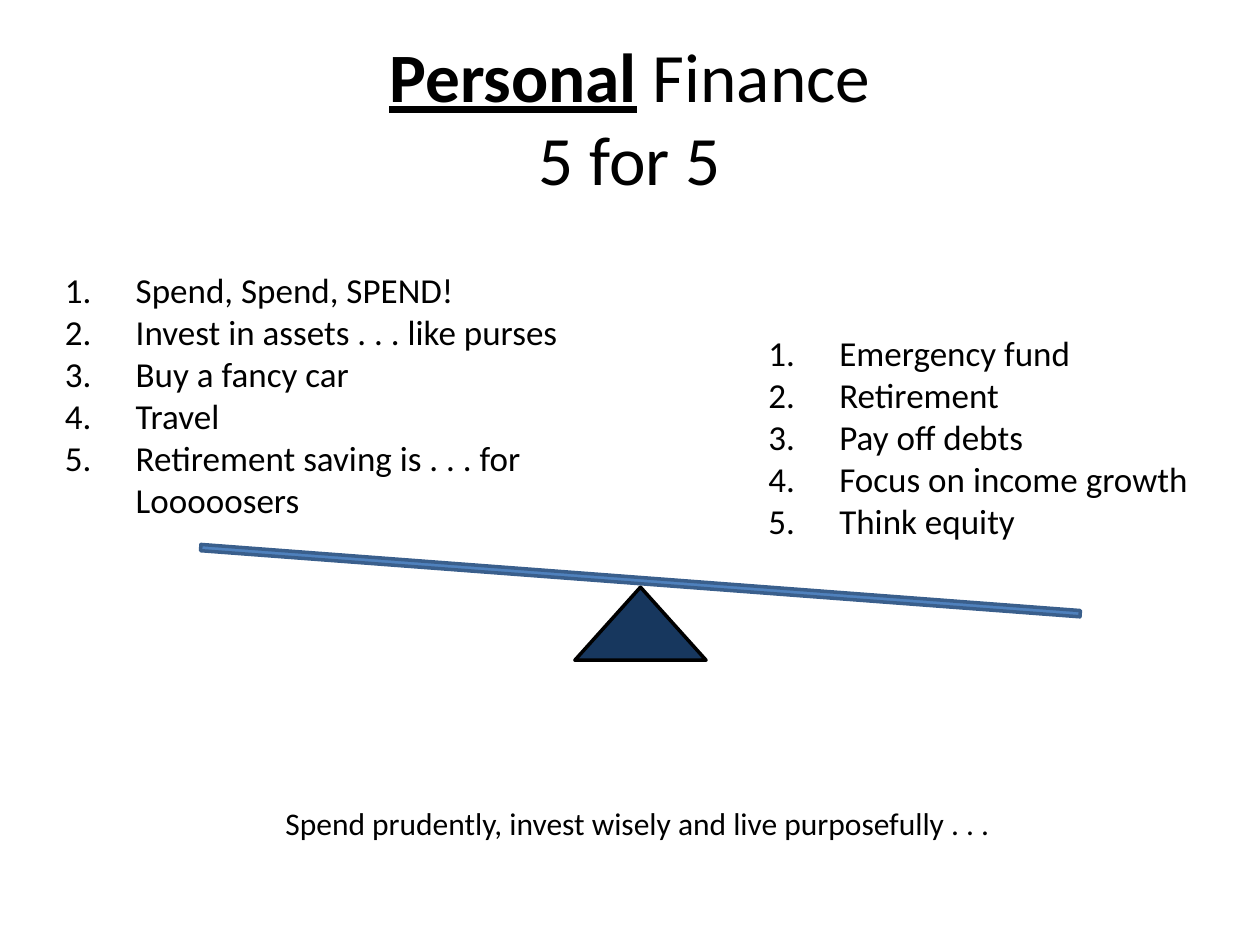
from typing import NamedTuple

import pptx
import pptx.dml.color
import pptx.enum.shapes
import pptx.enum.text
import pptx.oxml.ns
import pptx.util
from lxml import etree

Pt = pptx.util.Pt
ALIGN = pptx.enum.text.PP_ALIGN
ANCHOR = pptx.enum.text.MSO_ANCHOR
SHAPE = pptx.enum.shapes.MSO_SHAPE

FONT = "Calibri"
INDENT = 40.5
COLORS = {
    "text": "000000",
    "outline": "000000",
    "fulcrum": "17375E",
    "beam": "4F81BD",
    "beam_edge": "3A5F8C",
}


class Box(NamedTuple):
    left: float
    top: float
    width: float
    height: float

    def lengths(self) -> list:
        return [Pt(v) for v in self]


class NumberedList(NamedTuple):
    box: Box
    items: list[str]
    align: ALIGN


class Part(NamedTuple):
    kind: SHAPE
    box: Box
    fill: str
    line: str
    rotation: float = 0


LISTS = [
    NumberedList(Box(30, 150, 318, 168), [
        "Spend, Spend, SPEND!",
        "Invest in assets . . . like purses",
        "Buy a fancy car",
        "Travel",
        "Retirement saving is . . . for Looooosers",
    ], ALIGN.LEFT),
    NumberedList(Box(432, 186, 264, 156), [
        "Emergency fund",
        "Retirement",
        "Pay off debts",
        "Focus on income growth",
        "Think equity",
    ], ALIGN.JUSTIFY),
]

SEESAW = [
    Part(SHAPE.ISOSCELES_TRIANGLE, Box(328.5, 335.5, 75, 41.75), "fulcrum", "outline"),
    Part(SHAPE.RECTANGLE, Box(114, 330, 504, 3.6), "beam", "beam_edge", 4.3),
]


def rgb(name: str) -> pptx.dml.color.RGBColor:
    return pptx.dml.color.RGBColor.from_string(COLORS[name])


def add_text(p, text: str, *, size: float, bold: bool = False,
             underline: bool = False) -> None:
    r = p.add_run()
    r.text = text
    r.font.name = FONT
    r.font.size = Pt(size)
    r.font.bold = bold
    r.font.underline = underline
    r.font.color.rgb = rgb("text")


def add_box(s, box: Box, *, wrap: bool = True, anchor: ANCHOR = ANCHOR.TOP):
    tf = s.shapes.add_textbox(*box.lengths()).text_frame
    tf.word_wrap = wrap
    tf.vertical_anchor = anchor
    return tf


def number(p) -> None:
    """Give the paragraph an automatic number and a hanging indent."""
    pPr = p._p.get_or_add_pPr()
    pPr.set("marL", str(Pt(INDENT)))
    pPr.set("indent", str(-Pt(INDENT)))
    etree.SubElement(pPr, pptx.oxml.ns.qn("a:buFont"), typeface="+mj-lt")
    etree.SubElement(pPr, pptx.oxml.ns.qn("a:buAutoNum"), type="arabicPeriod")


def add_list(s, numbered: NumberedList) -> None:
    tf = add_box(s, numbered.box)
    for i, item in enumerate(numbered.items):
        p = tf.add_paragraph() if i else tf.paragraphs[0]
        p.alignment = numbered.align
        number(p)
        add_text(p, item, size=20)


def add_part(s, part: Part) -> None:
    sp = s.shapes.add_shape(part.kind, *part.box.lengths())
    sp.shadow.inherit = False
    sp.rotation = part.rotation
    sp.fill.solid()
    sp.fill.fore_color.rgb = rgb(part.fill)
    sp.line.color.rgb = rgb(part.line)
    sp.line.width = Pt(2)


def add_title(s) -> None:
    p = add_box(s, Box(36, 21.6, 648, 90), anchor=ANCHOR.MIDDLE).paragraphs[0]
    p.alignment = ALIGN.CENTER
    add_text(p, "Personal", size=39.6, bold=True, underline=True)
    add_text(p, " Finance", size=39.6)
    p.add_line_break()
    add_text(p, "5 for 5", size=39.6)


def main() -> None:
    prs = pptx.Presentation()
    prs.slide_width, prs.slide_height = Pt(720), Pt(540)
    s = prs.slides.add_slide(prs.slide_layouts[6])

    add_title(s)
    for numbered in LISTS:
        add_list(s, numbered)

    tf = add_box(s, Box(156, 456, 422, 29), wrap=False)
    tf.auto_size = pptx.enum.text.MSO_AUTO_SIZE.SHAPE_TO_FIT_TEXT
    add_text(tf.paragraphs[0],
             "Spend prudently, invest wisely and live purposefully . . .", size=18)

    for part in SEESAW:
        add_part(s, part)

    prs.save("out.pptx")


if __name__ == "__main__":
    main()
